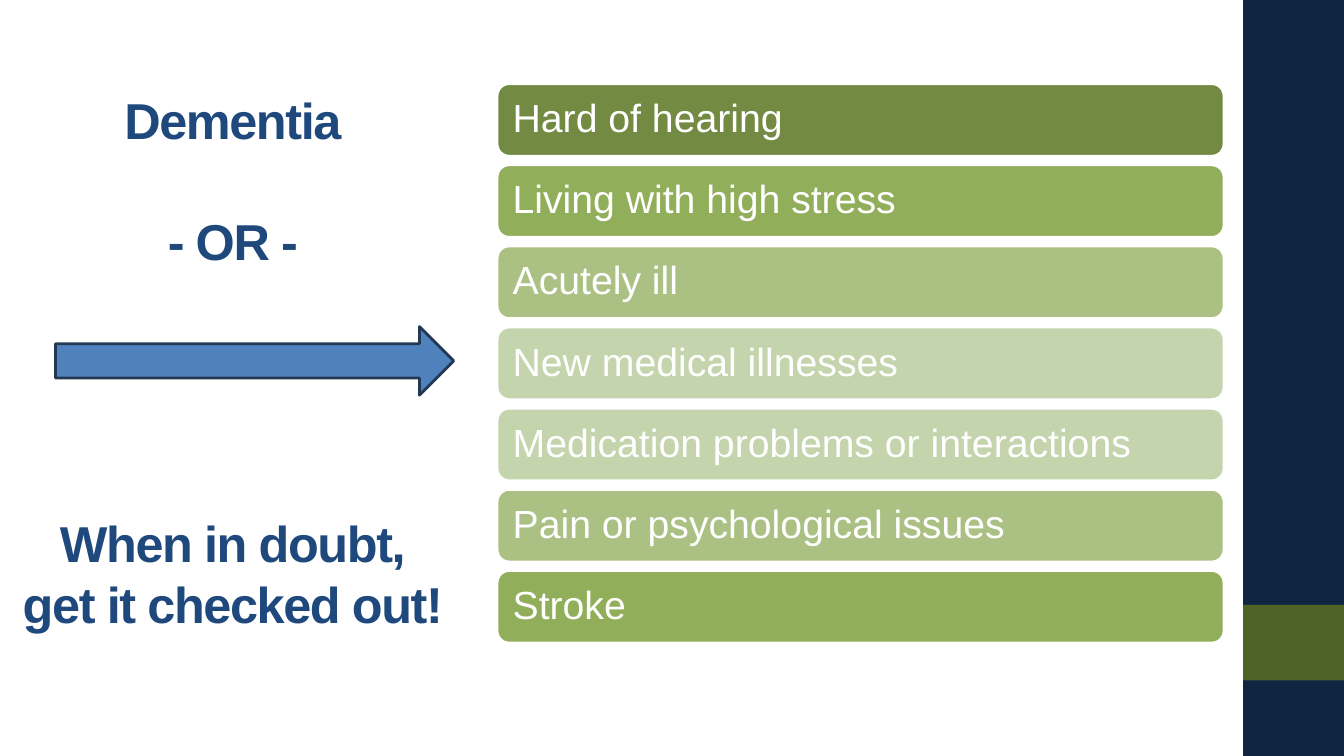
from pptx import Presentation
from pptx.dml.color import RGBColor
from pptx.enum.shapes import MSO_SHAPE
from pptx.enum.text import MSO_ANCHOR, MSO_AUTO_SIZE, PP_ALIGN
from pptx.util import Inches, Pt

RECT, ROUND, ARROW = MSO_SHAPE.RECTANGLE, MSO_SHAPE.ROUNDED_RECTANGLE, MSO_SHAPE.RIGHT_ARROW
MIDDLE, NO_FIT = MSO_ANCHOR.MIDDLE, MSO_AUTO_SIZE.NONE
LEFT, CENTER = PP_ALIGN.LEFT, PP_ALIGN.CENTER

# Content: title lines with the number of empty lines above each
TITLE = [(0, ["Dementia"]), (1, ["- OR -"]),
         (4, ["When in doubt,", "get it checked out!"])]
CAUSES = [
    ("Hard of hearing", "738A42"),
    ("Living with high stress", "91AE5A"),
    ("Acutely ill", "AAC183"),
    ("New medical illnesses", "C4D4AC"),
    ("Medication problems or interactions", "C4D4AC"),
    ("Pain or psychological issues", "AAC183"),
    ("Stroke", "91AE5A"),
]

# Layout in inches, type in points
WIDE, HIGH = 13.33, 7.5
SIDE = 1
BAR_X, BAR_Y, BAR_W, BAR_H = 4.93, 0.83, 7.21, 0.72
STEP = 0.805
LINE = 43.2


def color(code):
    return RGBColor.from_string(code)


def style(run, size, code, bold=False):
    font = run.font
    font.name, font.size, font.bold = "Arial", Pt(size), bold
    font.color.rgb = color(code)


def draw(kind, x, y, w, h, fill, edge=None):
    shape = slide.shapes.add_shape(kind, Inches(x), Inches(y), Inches(w), Inches(h))
    shape.shadow.inherit = False
    shape.fill.solid()
    shape.fill.fore_color.rgb = color(fill)
    if edge:
        shape.line.color.rgb = color(edge)
        shape.line.width = Pt(2)
    else:
        shape.line.fill.background()
    return shape


deck = Presentation()
deck.slide_width, deck.slide_height = Inches(WIDE), Inches(HIGH)
slide = deck.slides.add_slide(deck.slide_layouts[5])

# Side band
draw(RECT, WIDE - SIDE, 0, SIDE, HIGH, "0F2541")
draw(RECT, WIDE - SIDE, HIGH * 0.8, SIDE, HIGH * 0.1, "4F6228")

# Title
title = slide.shapes.title
title.left, title.top = Inches(0.12), Inches(0.74)
title.width, title.height = Inches(4.38), Inches(5.69)
frame = title.text_frame
frame.word_wrap, frame.auto_size, frame.vertical_anchor = True, NO_FIT, MIDDLE
frame.margin_left = frame.margin_right = Inches(0.05)
for n, (gap, lines) in enumerate(TITLE):
    para = frame.add_paragraph() if n else frame.paragraphs[0]
    para.alignment, para.line_spacing = CENTER, Pt(LINE)
    para.space_before = Pt(gap * LINE)
    for k, line in enumerate(lines):
        if k:
            para.add_line_break()
        run = para.add_run()
        run.text = line
        style(run, 36, "1F497D", True)
        run.font._element.set("spc", "-100")

# Bars of other causes
for n, (cause, fill) in enumerate(CAUSES):
    bar = draw(ROUND, BAR_X, BAR_Y + n * STEP, BAR_W, BAR_H, fill, "FFFFFF")
    frame = bar.text_frame
    frame.word_wrap, frame.vertical_anchor = True, MIDDLE
    frame.margin_left = frame.margin_right = Inches(0.12)
    para = frame.paragraphs[0]
    para.alignment, para.line_spacing = LEFT, 0.9
    run = para.add_run()
    run.text = cause
    style(run, 28, "FFFFFF")

# Arrow from title to bars
draw(ARROW, 0.55, 3.24, 3.95, 0.68, "4F81BD", "233953")

deck.save("out.pptx")
